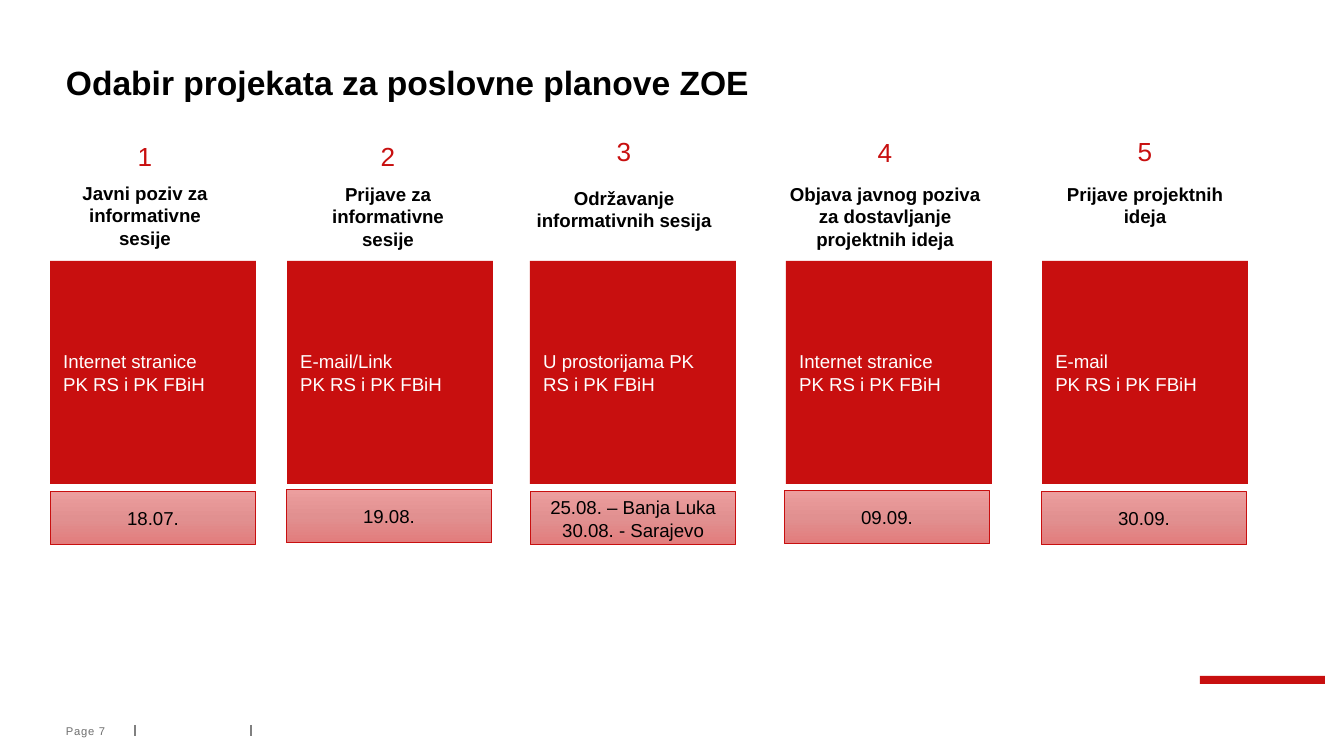
from copy import deepcopy

from pptx import Presentation
from pptx import util as u
from pptx.dml.color import RGBColor
from pptx.enum import shapes, text
from pptx.oxml import ns, xmlchemy
from pptx.oxml import parse_xml

PX = 914400 / 134.4
RED, GREY = "C80F0F", "808080"
GRADIENT = [(0, "EC9E9E"), (0.5, "E19090"), (1, "E27C7C")]
LEFT, MIDDLE, BOTTOM = text.PP_ALIGN.LEFT, text.MSO_ANCHOR.MIDDLE, text.MSO_ANCHOR.BOTTOM
CENTER = text.PP_ALIGN.CENTER

TITLE = "Odabir projekata za poslovne planove ZOE"
PAGE = "Page 7"
CARD = {"top": 261, "width": 206, "height": 223}
DATE_HEIGHT = 53
NUMBER = {"width": 42, "height": 46}
STEPS = [
    {"heading": "Javni poziv za informative sesije".replace("informative", "informativne"),
     "place": ["Internet stranice", "PK RS i PK FBiH"], "dates": ["18.07."],
     "card_x": 50, "date_at": (50, 492), "center": 145, "number_y": 134, "heading_box": (175, 191, 82)},
    {"heading": "Prijave za informativne sesije",
     "place": ["E-mail/Link", "PK RS i PK FBiH"], "dates": ["19.08."],
     "card_x": 287, "date_at": (286, 490), "center": 388, "number_y": 134, "heading_box": (176, 191, 82)},
    {"heading": "Održavanje informativnih sesija",
     "place": ["U prostorijama PK RS i PK FBiH"], "dates": ["25.08. – Banja Luka", "30.08. - Sarajevo"],
     "card_x": 530, "date_at": (530, 492), "center": 624, "number_y": 129, "heading_box": (180, 206, 59)},
    {"heading": "Objava javnog poziva za dostavljanje projektnih ideja",
     "place": ["Internet stranice", "PK RS i PK FBiH"], "dates": ["09.09."],
     "card_x": 786, "date_at": (784, 491), "center": 885, "number_y": 130, "heading_box": (176, 239, 82)},
    {"heading": "Prijave projektnih ideja",
     "place": ["E-mail", "PK RS i PK FBiH"], "dates": ["30.09."],
     "card_x": 1042, "date_at": (1041, 492), "center": 1145, "number_y": 129, "heading_box": (176, 191, 59)},
]


def px(*values):
    return [u.Emu(round(v * PX)) for v in values]


def rgb(color):
    return RGBColor.from_string(color)


def write(sp, lines, size, color, bold=False, align=LEFT, spacing=None, letter=None, **frame):
    tf = sp.text_frame
    for name, value in {"word_wrap": True, **frame}.items():
        setattr(tf, name, value)
    for i, line in enumerate(lines):
        p = tf.paragraphs[0] if i == 0 else tf.add_paragraph()
        p.alignment = align
        if spacing:
            p.line_spacing = spacing
        r = p.add_run()
        r.text = line
        for name, value in {"name": "Arial", "size": u.Pt(size), "bold": bold}.items():
            setattr(r.font, name, value)
        r.font.color.rgb = rgb(color)
        if letter:
            r._r.get_or_add_rPr().set("spc", str(letter))


def add_text(s, box, lines, size, color, **format_values):
    write(s.shapes.add_textbox(*px(*box)), lines, size, color, **format_values)


def add_box(s, box, fill=None):
    sp = s.shapes.add_shape(shapes.MSO_SHAPE.RECTANGLE, *px(*box))
    sp.shadow.inherit = False
    if fill:
        sp.fill.solid()
        sp.fill.fore_color.rgb = rgb(fill)
        sp.line.fill.background()
        return sp
    sp.fill.gradient()
    sp.fill.gradient_angle = 270
    stops = sp._element.spPr.find(".//" + ns.qn("a:gsLst"))
    stops.insert(1, deepcopy(stops[0]))
    for stop, (position, color) in zip(sp.fill.gradient_stops, GRADIENT):
        stop.position = position
        stop.color.rgb = rgb(color)
    sp.line.color.rgb = rgb(RED)
    sp.line.width = u.Pt(0.5)
    return sp


def add_divider(s, x):
    line = s.shapes.add_connector(shapes.MSO_CONNECTOR.STRAIGHT, *px(x, 725, x, 736))
    line.line.color.rgb = rgb(GREY)
    line.line.width = u.Pt(0.75)
    line._element.spPr.append(parse_xml(f"<a:effectLst {ns.nsdecls('a')}/>"))


def add_step(s, number, step):
    center = step["center"]
    top, width, height = step["heading_box"]
    add_box_text = {"vertical_anchor": MIDDLE}
    card = add_box(s, (step["card_x"], CARD["top"], CARD["width"], CARD["height"]), RED)
    write(card, step["place"], 10, "FFFFFF", **add_box_text)
    date = add_box(s, (*step["date_at"], CARD["width"], DATE_HEIGHT))
    write(date, step["dates"], 10, "000000", align=CENTER, **add_box_text)
    add_text(s, (center - NUMBER["width"] / 2, step["number_y"], NUMBER["width"], NUMBER["height"]),
             [str(number)], 14, RED, align=CENTER, word_wrap=False)
    add_text(s, (center - width / 2, top, width, height),
             [step["heading"]], 10, "000000", bold=True, align=CENTER)


def main():
    """Build the project selection slide and save it."""
    prs = Presentation()
    prs.slide_width, prs.slide_height = px(1344, 756)
    s = prs.slides.add_slide(prs.slide_layouts[6])
    add_box(s, (1200, 676, 125, 8), RED)
    for x in (135, 251):
        add_divider(s, x)
    flush = {"margin_left": 0, "margin_top": 0, "margin_bottom": 0}
    add_text(s, (66, 24, 1259, 79), [TITLE], 18, "000000", bold=True, spacing=0.9,
             vertical_anchor=BOTTOM, margin_right=u.Inches(0.08), **flush)
    add_text(s, (66, 725, 66, 13), [PAGE], 6, "6F6F6F", letter=40,
             vertical_anchor=MIDDLE, margin_right=0, **flush)
    for number, step in enumerate(STEPS, 1):
        add_step(s, number, step)
    prs.save("out.pptx")


if __name__ == "__main__":
    main()
